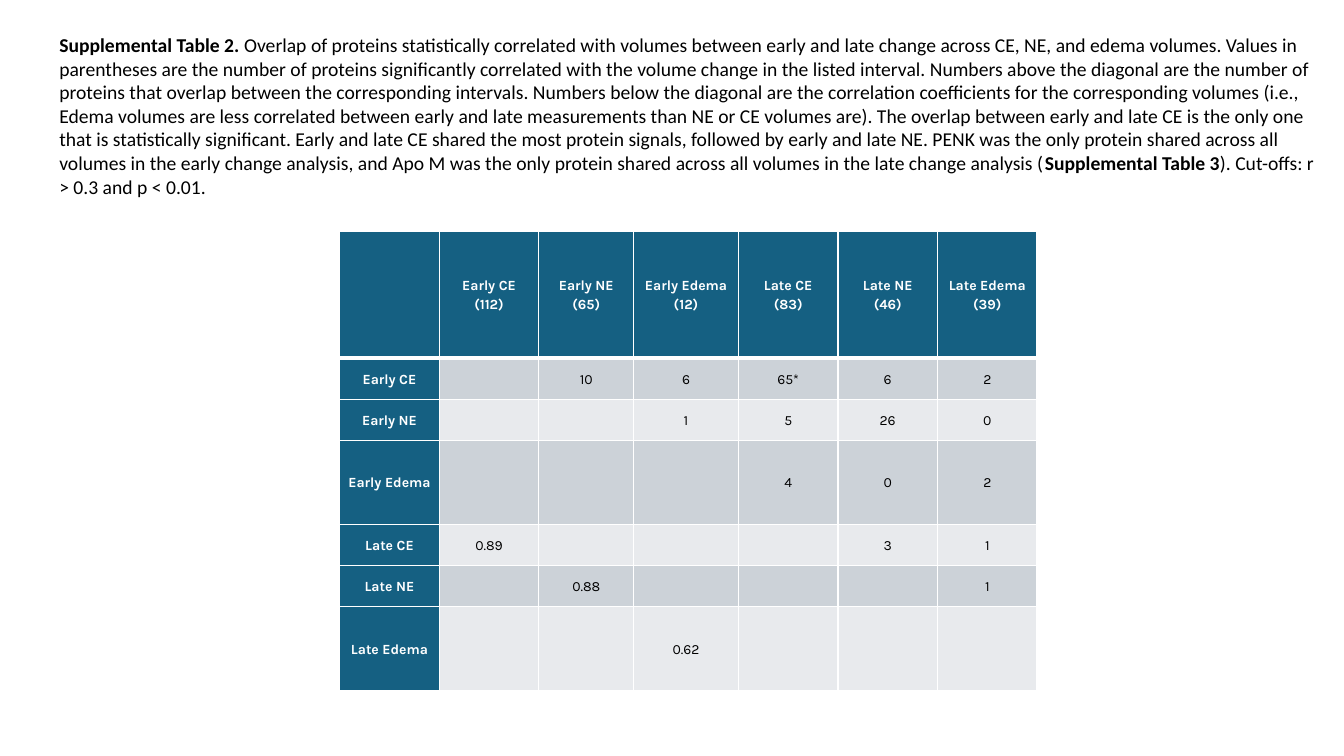
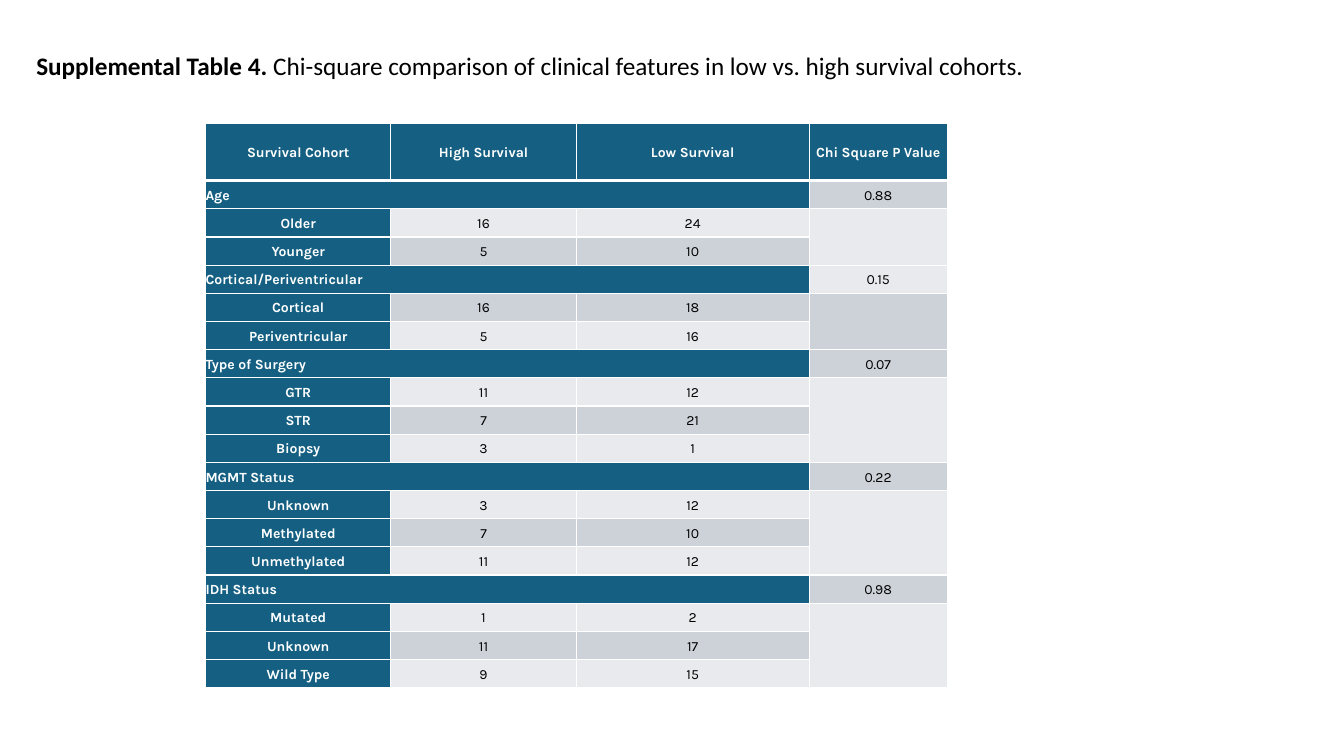
from lxml.etree import SubElement
from pptx import Presentation
from pptx.dml.color import RGBColor
from pptx.enum.text import MSO_ANCHOR, MSO_AUTO_SIZE, PP_ALIGN
from pptx.oxml.ns import qn
from pptx.util import Cm, Pt

COLORS = {
    "header": "156082",
    "band_dark": "CCD2D8",
    "band_light": "E8EAED",
    "white": "FFFFFF",
    "black": "000000",
}
CAPTION_FONT, TABLE_FONT = "Calibri", "Karla"

# Content: captions as (text, bold) runs
OVERLAP_SENTENCES = [
    "Overlap of proteins statistically correlated with volumes between early and late "
    "change across CE, NE, and edema volumes.",
    "Values in parentheses are the number of proteins significantly correlated with the "
    "volume change in the listed interval.",
    "Numbers above the diagonal are the number of proteins that overlap between the "
    "corresponding intervals.",
    "Numbers below the diagonal are the correlation coefficients for the corresponding "
    "volumes (i.e., Edema volumes are less correlated between early and late measurements "
    "than NE or CE volumes are).",
    "The overlap between early and late CE is the only one that is statistically significant.",
    "Early and late CE shared the most protein signals, followed by early and late NE.",
    "PENK was the only protein shared across all volumes in the early change analysis, and "
    "Apo M was the only protein shared across all volumes in the late change analysis (",
]
OVERLAP_CAPTION = [
    ("Supplemental Table 2. ", True),
    (" ".join(OVERLAP_SENTENCES), False),
    ("Supplemental Table 3", True),
    ("). Cut-offs: r > 0.3 and p < 0.01.", False),
]
SURVIVAL_CAPTION = [
    ("Supplemental Table 4. ", True),
    ("Chi-square comparison of clinical features in low vs. high survival cohorts.", False),
]

# Content: volume, protein count, overlaps or coefficients
OVERLAPS = [
    ("Early CE", 112, ["", "10", "6", "65*", "6", "2"]),
    ("Early NE", 65, ["", "", "1", "5", "26", "0"]),
    ("Early Edema", 12, ["", "", "", "4", "0", "2"]),
    ("Late CE", 83, ["0.89", "", "", "", "3", "1"]),
    ("Late NE", 46, ["", "0.88", "", "", "", "1"]),
    ("Late Edema", 39, ["", "", "0.62", "", "", ""]),
]

# Content: feature, p value, (group, high survival, low survival)
SURVIVAL_HEADER = ["Survival Cohort", "High Survival", "Low Survival", "Chi Square P Value"]
FEATURES = [
    ("Age", "0.88", [("Older", 16, 24), ("Younger", 5, 10)]),
    ("Cortical/Periventricular", "0.15", [("Cortical", 16, 18), ("Periventricular", 5, 16)]),
    ("Type of Surgery", "0.07", [("GTR", 11, 12), ("STR", 7, 21), ("Biopsy", 3, 1)]),
    ("MGMT Status", "0.22",
     [("Unknown", 3, 12), ("Methylated", 7, 10), ("Unmethylated", 11, 12)]),
    ("IDH Status", "0.98", [("Mutated", 1, 2), ("Unknown", 11, 17), ("Wild Type", 9, 15)]),
]


def rgb(name):
    return RGBColor.from_string(COLORS[name])


def add_caption_slide(presentation, runs, box, size, alignment):
    """Add a title-only slide whose title is the table caption."""
    slide = presentation.slides.add_slide(presentation.slide_layouts[5])
    title = slide.shapes.title
    title.left, title.top, title.width, title.height = map(Cm, box)
    frame = title.text_frame
    frame.word_wrap = True
    frame.auto_size = MSO_AUTO_SIZE.NONE
    frame.vertical_anchor = MSO_ANCHOR.TOP
    paragraph = frame.paragraphs[0]
    paragraph.alignment = alignment
    for text, bold in runs:
        run = paragraph.add_run()
        run.text = text
        run.font.name, run.font.size, run.font.bold = CAPTION_FONT, Pt(size), bold
        run.font.color.rgb = rgb("black")
    return slide


def set_borders(cell, top, bottom):
    properties = cell._tc.get_or_add_tcPr()
    for side, points in (("L", 1), ("R", 1), ("T", top), ("B", bottom)):
        line = SubElement(properties, qn(f"a:ln{side}"), w=str(Pt(points)))
        fill = SubElement(line, qn("a:solidFill"))
        SubElement(fill, qn("a:srgbClr"), val=COLORS["white"])


def format_cell(cell, row, column):
    is_header = row == 0 or column == 0
    band = "band_dark" if row % 2 else "band_light"
    set_borders(cell, top=3 if row == 1 else 1, bottom=3 if row == 0 else 1)
    cell.fill.solid()
    cell.fill.fore_color.rgb = rgb("header" if is_header else band)
    cell.margin_left = cell.margin_right = cell.margin_top = cell.margin_bottom = 0
    cell.vertical_anchor = MSO_ANCHOR.MIDDLE
    for paragraph in cell.text_frame.paragraphs:
        paragraph.alignment = PP_ALIGN.CENTER
        paragraph.line_spacing = Pt(13)
        font = paragraph.font
        font.name, font.size, font.bold = TABLE_FONT, Pt(10), is_header
        font.color.rgb = rgb("white" if is_header else "black")


def add_banded_table(slide, rows, left, top, widths, heights):
    table = slide.shapes.add_table(
        len(rows), len(widths), Cm(left), Cm(top), Cm(sum(widths)), Cm(sum(heights))).table
    for column, width in zip(table.columns, widths):
        column.width = Cm(width)
    for table_row, height in zip(table.rows, heights):
        table_row.height = Cm(height)
    for r, texts in enumerate(rows):
        for c, text in enumerate(texts):
            cell = table.cell(r, c)
            cell.text = text
            format_cell(cell, r, c)
    return table


def build_overlap_slide(presentation):
    slide = add_caption_slide(
        presentation, OVERLAP_CAPTION, (1.24, 0.71, 32.21, 4.45), 14, PP_ALIGN.LEFT)
    rows = [[""] + [f"{volume}\n({count})" for volume, count, _ in OVERLAPS]]
    rows += [[volume] + values for volume, _, values in OVERLAPS]
    widths = [2.51, 2.51, 2.39, 2.64, 2.51, 2.51, 2.51]
    heights = [3.2] + [1.04, 1.04, 2.11] * 2
    add_banded_table(slide, rows, 8.56, 5.82, widths, heights)


def build_survival_slide(presentation):
    slide = add_caption_slide(
        presentation, SURVIVAL_CAPTION, (0.66, 1.14, 31.32, 1.02), 18, PP_ALIGN.JUSTIFY)
    rows, sections = [SURVIVAL_HEADER], []
    for feature, p_value, groups in FEATURES:
        sections.append((len(rows), len(groups)))
        rows.append([feature, "", "", p_value])
        rows += [[group, str(high), str(low), ""] for group, high, low in groups]
    heights = [1.45] + [0.71] * (len(rows) - 1)
    table = add_banded_table(slide, rows, 5.18, 3.1, [4.67, 4.67, 5.87, 3.48], heights)

    # Feature rows span the counts; the space below each p value is one cell
    for start, group_count in sections:
        feature_cell = table.cell(start, 0)
        feature_cell.merge(table.cell(start, 2))
        feature_cell.text_frame.paragraphs[0].alignment = PP_ALIGN.LEFT
        table.cell(start + 1, 3).merge(table.cell(start + group_count, 3))


def main():
    presentation = Presentation()
    presentation.slide_width, presentation.slide_height = Cm(33.87), Cm(19.05)
    build_overlap_slide(presentation)
    build_survival_slide(presentation)
    presentation.save("out.pptx")


if __name__ == "__main__":
    main()
